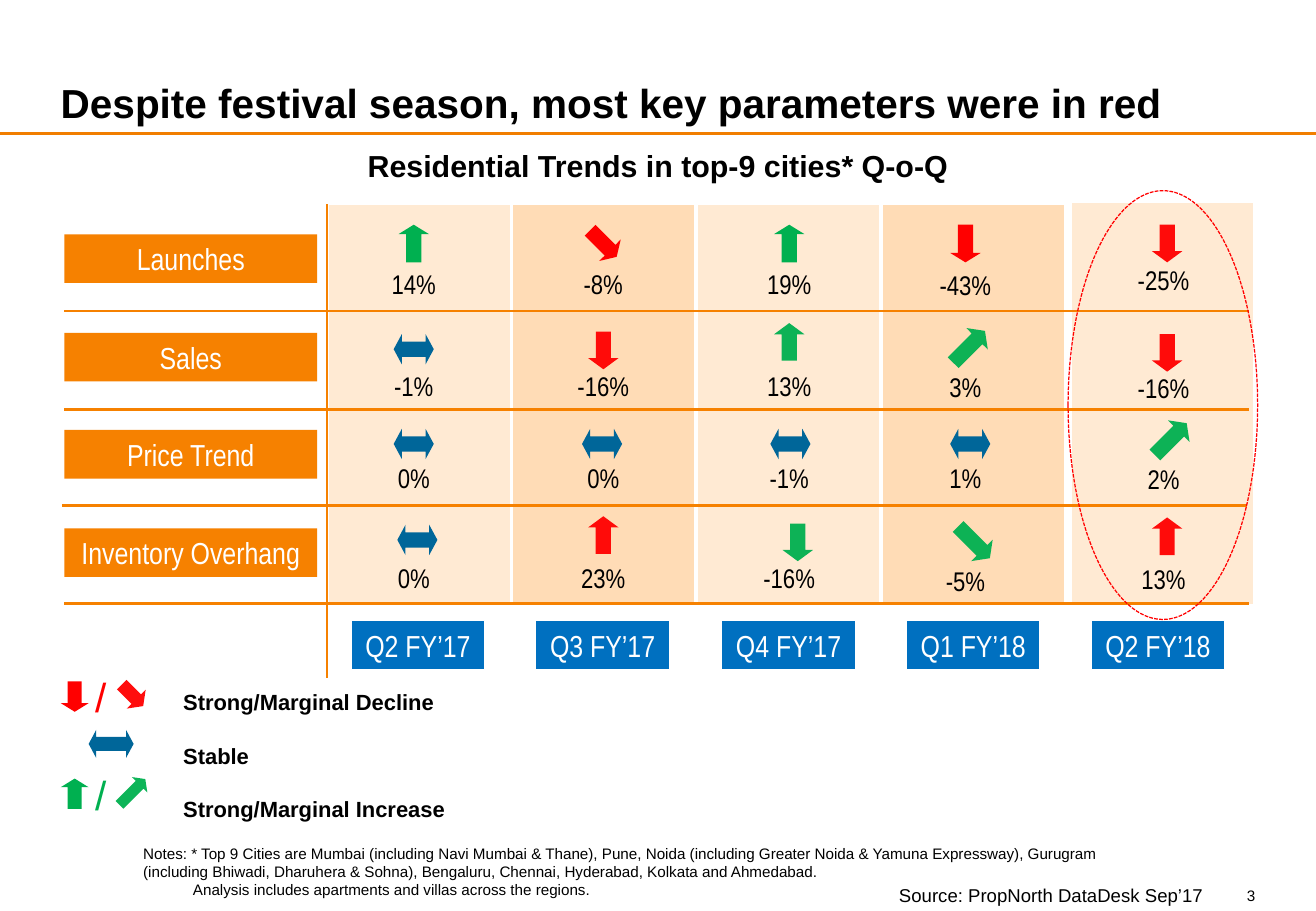
from lxml.etree import SubElement
from pptx import Presentation
from pptx.dml.color import RGBColor
from pptx.enum.dml import MSO_LINE
from pptx.enum.shapes import MSO_CONNECTOR, MSO_SHAPE
from pptx.enum.text import MSO_ANCHOR, PP_ALIGN
from pptx.oxml.ns import qn
from pptx.util import Emu, Pt

SCALE = 9144  # EMU in one px, 100 px to the inch
ORANGE, BLUE, TEAL = "F68100", "0070C0", "006699"
RED, GREEN, WHITE, BLACK = "FF0000", "00B050", "FFFFFF", "000000"
ANGLES = {"up": 0, "rise": 45, "fall": 135, "down": 180}


def px(length):
    return Emu(length * SCALE)


def colour(value):
    return RGBColor.from_string(value)


class TrendSlide:
    """Holds the slide and the shared style of its elements."""

    def __init__(self, slide):
        self.slide = slide
        self.formats = {"name": "Arial", "size": 16, "bold": False}

    def fill_text(self, shape, texts, ink=BLACK, align=PP_ALIGN.LEFT, anchor=MSO_ANCHOR.MIDDLE,
                  insets=(10, 5), wrap=True, gap=0, **formats):
        frame = shape.text_frame
        side, end = map(px, insets)
        settings = {"word_wrap": wrap, "vertical_anchor": anchor, "margin_left": side,
                    "margin_right": side, "margin_top": end, "margin_bottom": end}
        for name, value in settings.items():
            setattr(frame, name, value)
        for index, text in enumerate(texts):
            paragraph = frame.add_paragraph() if index else frame.paragraphs[0]
            paragraph.alignment = align
            if index and gap:
                paragraph.space_before = Pt(gap)
            run = paragraph.add_run()
            run.text = text
            for name, value in {**self.formats, **formats}.items():
                setattr(run.font, name, Pt(value) if name == "size" else value)
            run.font.color.rgb = colour(ink)
        return frame

    def text(self, box, *texts, **style):
        return self.fill_text(self.slide.shapes.add_textbox(*map(px, box)), texts, **style)

    def shape(self, kind, box, fill=None, line=None):
        shape = self.slide.shapes.add_shape(kind, *map(px, box))
        shape.shadow.inherit = False
        if fill:
            shape.fill.solid()
            shape.fill.fore_color.rgb = colour(fill)
        else:
            shape.fill.background()
        if line:
            shape.line.color.rgb = colour(line)
            shape.line.width = Pt(0.75)
        else:
            shape.line.fill.background()
        return shape

    def label(self, box, text, fill, line=None):
        self.fill_text(self.shape(MSO_SHAPE.RECTANGLE, box, fill, line), [text], ink=WHITE,
                       align=PP_ALIGN.CENTER, wrap=False, name="Arial Narrow", size=18)

    def rule(self, start, end, ink=ORANGE):
        line = self.slide.shapes.add_connector(
            MSO_CONNECTOR.STRAIGHT, *map(px, start + end))
        line.line.color.rgb = colour(ink)
        line.line.width = Pt(1.5)
        SubElement(line._element.spPr, qn("a:effectLst"))

    def arrow(self, box, direction, fill, soft=False):
        stable = direction == "stable"
        kind = MSO_SHAPE.LEFT_RIGHT_ARROW if stable else MSO_SHAPE.UP_ARROW
        arrow = self.shape(kind, box, fill)
        arrow.adjustments[0] = 0.5
        arrow.adjustments[1] = 0.27 if stable else 0.37 if soft else 0.31
        arrow.rotation = ANGLES.get(direction, 0)
        if soft:
            tint = arrow._element.spPr.find(qn("a:solidFill"))[0]
            SubElement(tint, qn("a:alpha"), val="95000")


# Each cell: value, top of value, direction, colour, left and top of arrow, soft
TRENDS = {
    "Launches": [
        ("14%", 215, "up", GREEN, 328, 185, False),
        ("-8%", 215, "fall", RED, 484, 185, False),
        ("19%", 215, "up", GREEN, 637, 185, False),
        ("-43%", 216, "down", RED, 782, 185, False),
        ("-25%", 212, "down", RED, 948, 185, True)],
    "Sales": [
        ("-1%", 299, "stable", TEAL, 324, 275, False),
        ("-16%", 299, "down", RED, 484, 273, True),
        ("13%", 299, "up", GREEN, 637, 266, True),
        ("3%", 300, "rise", GREEN, 785, 267, True),
        ("-16%", 301, "down", RED, 948, 275, True)],
    "Price Trend": [
        ("0%", 375, "stable", TEAL, 324, 353, False),
        ("0%", 375, "stable", TEAL, 479, 353, False),
        ("-1%", 375, "stable", TEAL, 634, 353, False),
        ("1%", 375, "stable", TEAL, 782, 353, False),
        ("2%", 376, "rise", GREEN, 951, 343, True)],
    "Inventory Overhang": [
        ("0%", 457, "stable", TEAL, 327, 432, False),
        ("23%", 457, "up", RED, 484, 425, True),
        ("-16%", 457, "down", GREEN, 644, 431, True),
        ("-5%", 460, "fall", GREEN, 789, 428, True),
        ("13%", 458, "up", RED, 948, 426, True)],
}
QUARTERS = ["Q2 FY’17", "Q3 FY’17", "Q4 FY’17", "Q1 FY’18", "Q2 FY’18"]
VALUE_LEFTS = [307, 463, 616, 761, 924]
COLUMNS = [(270, 168), (422, 168), (574, 168), (726, 168), (882, 167)]
ROW_RULES = [(53, 256), (53, 337), (51, 416), (53, 497)]


def main():
    presentation = Presentation()
    presentation.slide_width, presentation.slide_height = px(1083), px(750)
    page = TrendSlide(presentation.slides.add_slide(presentation.slide_layouts[6]))

    # Title, subtitle and footer
    page.rule((1083, 110), (0, 110), "F17E00")
    page.text((50, 18, 983, 91), "Despite festival season, most key parameters were in red",
              anchor=MSO_ANCHOR.BOTTOM, insets=(0, 5), size=24, bold=True)
    page.text((280, 115, 523, 42), "Residential Trends in top-9 cities* Q-o-Q",
              align=PP_ALIGN.CENTER, insets=(0, 5), size=18, bold=True)
    page.text((730, 723, 343, 29), "Source: PropNorth DataDesk Sep’17",
              anchor=MSO_ANCHOR.TOP, size=11)
    page.text((1012, 730, 21, 15), "3", align=PP_ALIGN.RIGHT,
              anchor=MSO_ANCHOR.TOP, insets=(0, 0), size=9)

    # Column bands, rules and quarter labels
    for index, (left, top) in enumerate(COLUMNS):
        page.shape(MSO_SHAPE.RECTANGLE, (left, top, 150, 331),
                   "FFDCB6" if index % 2 else "FFEAD3", WHITE)
    page.rule((269, 168), (269, 558))
    for left, top in ROW_RULES:
        page.rule((left, top), (left + 975, top))
    for index, quarter in enumerate(QUARTERS):
        page.label((round(289 + 152.25 * index), 511, 110, 40), quarter, BLUE, WHITE)

    # Row labels, values and arrows
    for row, (parameter, cells) in enumerate(TRENDS.items()):
        page.label((53, round(193 + 80.67 * row), 208, 40), parameter, ORANGE)
        for value_left, cell in zip(VALUE_LEFTS, cells):
            value, value_top, direction, fill, left, top, soft = cell
            page.text((value_left, value_top, 67, 37), value, align=PP_ALIGN.CENTER,
                      wrap=False, name="Arial Narrow")
            diagonal = direction in ("rise", "fall")
            size = (33, 25) if direction == "stable" else (25, 37 if diagonal and soft else 31)
            page.arrow((left, top, *size), direction, fill, soft)

    # Highlight of the latest quarter
    highlight = page.shape(MSO_SHAPE.OVAL, (879, 157, 156, 353), line=RED)
    highlight.line.dash_style = MSO_LINE.SQUARE_DOT

    # Legend
    page.text((141, 564, 367, 116), "Strong/Marginal Decline", "Stable",
              "Strong/Marginal Increase", gap=16, size=13, bold=True)
    page.arrow((73, 601, 37, 23), "stable", TEAL)
    for top, strong, marginal, box, fill in [
            (561, "down", "fall", (98, 560, 22, 25), RED),
            (641, "up", "rise", (100, 637, 18, 30), GREEN)]:
        page.arrow(box, marginal, fill, soft=True)
        page.arrow((50, top, 23, 25), strong, fill)
        page.text((56, top, 54, 25), "/", ink=fill, align=PP_ALIGN.CENTER,
                  insets=(2, 2), size=24)

    # Notes
    notes = page.text(
        (108, 690, 845, 56),
        "Notes: * Top 9 Cities are Mumbai (including Navi Mumbai & Thane), Pune, Noida "
        "(including Greater Noida & Yamuna Expressway), Gurugram (including Bhiwadi, "
        "Dharuhera & Sohna), Bengaluru, Chennai, Hyderabad, Kolkata and Ahmedabad.",
        "Analysis includes apartments and villas across the regions.",
        anchor=MSO_ANCHOR.TOP, size=9)
    notes.paragraphs[1]._p.get_or_add_pPr().set("marL", str(px(41)))

    presentation.save("out.pptx")


if __name__ == "__main__":
    main()
